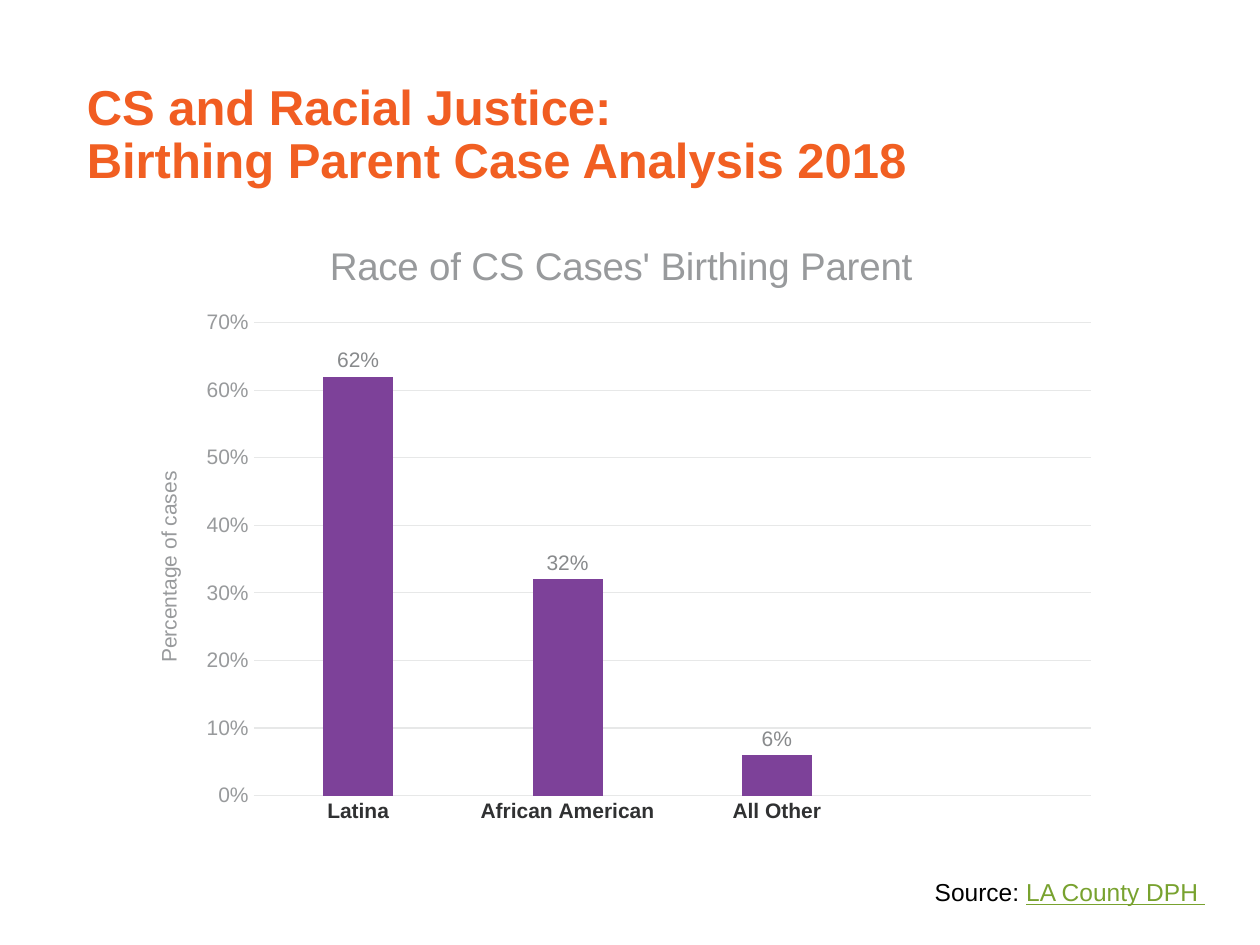
"""Build a slide with a column chart of birthing parent cases by race."""
from lxml import etree
from pptx import Presentation
from pptx.chart.data import CategoryChartData
from pptx.dml.color import RGBColor
from pptx.enum.chart import XL_CHART_TYPE as ChartType, XL_LABEL_POSITION as LabelPosition
from pptx.enum.chart import XL_TICK_MARK as TickMark
from pptx.enum.text import MSO_ANCHOR as Anchor
from pptx.oxml.ns import qn
from pptx.util import Inches, Pt

COLORS = {
    "heading": "F15D22", "subheading": "F15F22", "bar": "7D4199", "grid": "E7E8E8",
    "muted": "989A9C", "value": "888A8C", "category": "303132", "base": "616365",
    "source": "000000", "link": "78A22F",
}
HEADING = [
    [("CS and Racial Justice:", "heading", False)],
    [("Birthing Parent Case Analysis 2018", "subheading", False)],
]
SOURCE = [[("Source: ", "source", False), ("LA County DPH ", "link", True)]]
CHART_TITLE = "Race of CS Cases' Birthing Parent"
AXIS_TITLE = "Percentage of cases"
CASES = [("Latina", 0.62), ("African American", 0.32), ("All Other", 0.06), ("", None)]
PLOT_AREA = {"x": 0.126, "y": 0.173, "w": 0.852, "h": 0.763}


def style_font(font, size, color, bold=False):
    font.name = "Arial"
    font.size = Pt(size)
    font.bold = bold
    font.color.rgb = RGBColor.from_string(COLORS[color])


def style_line(line, color):
    line.width = Pt(0.75)
    line.color.rgb = RGBColor.from_string(COLORS[color])


def add_text(slide, box, lines, size, bold=False, anchor=Anchor.TOP):
    frame = slide.shapes.add_textbox(*map(Inches, box)).text_frame
    frame.word_wrap = True
    frame.vertical_anchor = anchor
    for index, line in enumerate(lines):
        paragraph = frame.add_paragraph() if index else frame.paragraphs[0]
        paragraph.line_spacing = 0.9
        for text, color, underline in line:
            run = paragraph.add_run()
            run.text = text
            style_font(run.font, size, color, bold)
            run.font.underline = underline


def add_title(owner, text, size):
    paragraph = owner.text_frame.paragraphs[0]
    run = paragraph.add_run()
    run.text = text
    style_font(run.font, size, "muted")


def place_plot(chart):
    plot_area = chart.plots[0]._element.getparent()
    for old_layout in plot_area.findall(qn("c:layout")):
        plot_area.remove(old_layout)
    layout = etree.Element(qn("c:layout"))
    plot_area.insert(0, layout)
    manual = etree.SubElement(layout, qn("c:manualLayout"))
    settings = {"layoutTarget": "inner", "xMode": "edge", "yMode": "edge", **PLOT_AREA}
    for name, value in settings.items():
        etree.SubElement(manual, qn(f"c:{name}"), val=str(value))


def add_case_chart(slide):
    data = CategoryChartData(number_format="0%")
    data.categories = [name for name, share in CASES]
    data.add_series(CHART_TITLE, [share for name, share in CASES])
    box = map(Inches, (1.03, 1.71, 7.8, 4.92))
    chart = slide.shapes.add_chart(ChartType.COLUMN_CLUSTERED, *box, data).chart
    style_font(chart.font, 10, "base")
    chart.has_legend = False
    add_title(chart.chart_title, CHART_TITLE, 22)

    plot = chart.plots[0]
    plot.gap_width = 199
    plot.vary_by_categories = False
    fill = plot.series[0].format.fill
    fill.solid()
    fill.fore_color.rgb = RGBColor.from_string(COLORS["bar"])
    labels = plot.series[0].data_labels
    labels.show_value = True
    labels.position = LabelPosition.OUTSIDE_END
    labels.number_format = "0%"
    labels.number_format_is_linked = False
    style_font(labels.font, 12, "value")

    category_axis, value_axis = chart.category_axis, chart.value_axis
    for axis in (category_axis, value_axis):
        axis.major_tick_mark = axis.minor_tick_mark = TickMark.NONE
    style_font(category_axis.tick_labels.font, 12, "category", True)
    style_line(category_axis.format.line, "grid")
    style_font(value_axis.tick_labels.font, 12, "muted")
    value_axis.tick_labels.number_format = "0%"
    value_axis.tick_labels.number_format_is_linked = False
    value_axis.minimum_scale, value_axis.maximum_scale = 0, 0.7
    value_axis.major_unit = 0.1
    value_axis.format.line.fill.background()
    style_line(value_axis.major_gridlines.format.line, "grid")
    add_title(value_axis.axis_title, AXIS_TITLE, 12)
    place_plot(chart)


def main():
    presentation = Presentation()
    presentation.slide_width, presentation.slide_height = Inches(10), Inches(7.5)
    slide = presentation.slides.add_slide(presentation.slide_layouts[6])
    add_text(slide, (0.59, 0.75, 9.21, 0.66), HEADING, 28, True, Anchor.MIDDLE)
    add_case_chart(slide)
    add_text(slide, (7.32, 6.94, 2.6, 0.31), SOURCE, 14)
    presentation.save("out.pptx")


if __name__ == "__main__":
    main()
